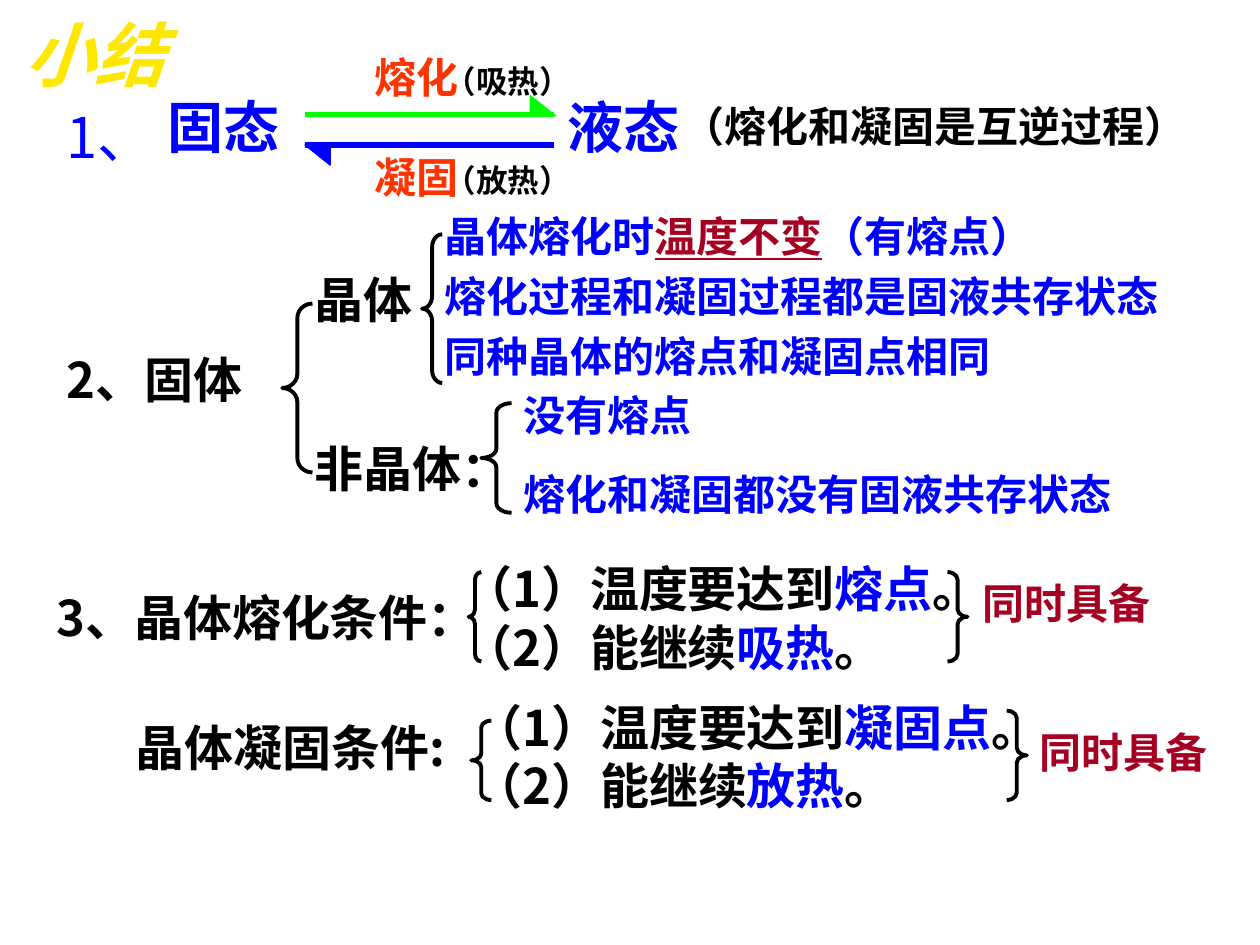
from dataclasses import dataclass

from lxml import etree
from pptx import Presentation
from pptx.dml.color import RGBColor
from pptx.enum.shapes import MSO_CONNECTOR, MSO_SHAPE
from pptx.enum.text import MSO_ANCHOR, PP_ALIGN
from pptx.oxml.ns import qn
from pptx.slide import Slide
from pptx.util import Inches, Pt

LEFT_BRACE = MSO_SHAPE.LEFT_BRACE
RIGHT_BRACE = MSO_SHAPE.RIGHT_BRACE
TRIANGLE = MSO_SHAPE.RIGHT_TRIANGLE
STRAIGHT = MSO_CONNECTOR.STRAIGHT
MIDDLE = MSO_ANCHOR.MIDDLE
LEFT, CENTER = PP_ALIGN.LEFT, PP_ALIGN.CENTER

FONT = "Noto Sans CJK SC"
BLACK, BLUE, GREEN = "000000", "0000FF", "00FF00"
ORANGE, CRIMSON, YELLOW = "FF3300", "A50021", "FFE701"


@dataclass(frozen=True)
class Span:
    text: str
    color: str
    underline: bool = False


@dataclass(frozen=True)
class Label:
    left: float
    top: float
    width: float
    height: float
    size: int
    spans: tuple[Span, ...]
    bold: bool = True
    italic: bool = False
    align: PP_ALIGN = LEFT


@dataclass(frozen=True)
class Brace:
    left: float
    top: float
    width: float
    height: float
    curve: float
    kind: MSO_SHAPE = LEFT_BRACE


@dataclass(frozen=True)
class HalfArrow:
    top: float
    head_left: float
    head_top: float
    rotation: int
    color: str


def rgb(color: str) -> RGBColor:
    return RGBColor.from_string(color)


def plain(left: float, top: float, width: float, height: float, size: int,
          text: str, color: str, **style) -> Label:
    return Label(left, top, width, height, size, (Span(text, color),), **style)


def conditions(left: float, top: float, width: float, point: str, heat: str) -> Label:
    return Label(left, top, width, 1.04, 28, (
        Span("（1）温度要达到", BLACK), Span(point, BLUE),
        Span("。（2）能继续", BLACK), Span(heat, BLUE), Span("。", BLACK)))


def draw_label(slide: Slide, label: Label) -> None:
    box = slide.shapes.add_textbox(Inches(label.left), Inches(label.top),
                                   Inches(label.width), Inches(label.height))
    frame = box.text_frame
    frame.word_wrap = True
    frame.vertical_anchor = MIDDLE
    paragraph = frame.paragraphs[0]
    paragraph.alignment = label.align
    font = paragraph.font
    font.name, font.size = FONT, Pt(label.size)
    font.bold, font.italic = label.bold, label.italic
    defaults = paragraph._p.pPr.find(qn("a:defRPr"))
    etree.SubElement(defaults, qn("a:ea")).set("typeface", FONT)
    for span in label.spans:
        run = paragraph.add_run()
        run.text = span.text
        run.font.color.rgb = rgb(span.color)
        if span.underline:
            run.font.underline = True


def draw_brace(slide: Slide, brace: Brace) -> None:
    shape = slide.shapes.add_shape(brace.kind, Inches(brace.left), Inches(brace.top),
                                   Inches(brace.width), Inches(brace.height))
    shape.adjustments[0] = brace.curve
    shape.shadow.inherit = False
    shape.fill.background()
    shape.line.color.rgb = rgb(BLACK)
    shape.line.width = Pt(2.25)


def draw_half_arrow(slide: Slide, arrow: HalfArrow) -> None:
    shaft = slide.shapes.add_connector(STRAIGHT, Inches(2.42), Inches(arrow.top),
                                       Inches(4.4), Inches(arrow.top))
    shaft.line.color.rgb = rgb(arrow.color)
    shaft.line.width = Pt(3)
    etree.SubElement(shaft._element.spPr, qn("a:effectLst"))
    head = slide.shapes.add_shape(TRIANGLE, Inches(arrow.head_left),
                                  Inches(arrow.head_top), Inches(0.2), Inches(0.16))
    head.rotation = arrow.rotation
    head.shadow.inherit = False
    head.fill.solid()
    head.fill.fore_color.rgb = rgb(arrow.color)
    head.line.color.rgb = rgb(arrow.color)
    head.line.width = Pt(0.75)


HALF_ARROWS = (
    HalfArrow(0.91, 4.21, 0.76, 0, GREEN),
    HalfArrow(1.15, 2.42, 1.15, 180, BLUE),
)

BRACES = (
    Brace(2.24, 2.41, 0.24, 1.34, 0.47),
    Brace(3.35, 1.86, 0.16, 1.18, 0.63),
    Brace(3.82, 3.2, 0.24, 0.87, 0.31),
    Brace(3.72, 4.54, 0.1, 0.71, 0.6),
    Brace(7.52, 4.54, 0.16, 0.71, 0.37, RIGHT_BRACE),
    Brace(3.74, 5.72, 0.16, 0.63, 0.33),
    Brace(7.99, 5.64, 0.16, 0.71, 0.37, RIGHT_BRACE),
)

LABELS = (
    plain(0.04, 0.05, 1.42, 0.75, 40, "小结", YELLOW, italic=True, align=CENTER),
    plain(0.43, 0.76, 1.19, 0.64, 32, "1、", BLUE, bold=False),
    plain(1.23, 0.68, 1.39, 0.64, 32, "固态", BLUE),
    plain(4.41, 0.68, 1.46, 0.64, 32, "液态", BLUE),
    plain(2.87, 0.36, 0.88, 0.5, 24, "熔化", ORANGE),
    plain(2.87, 1.15, 0.88, 0.5, 24, "凝固", ORANGE),
    plain(3.43, 0.44, 1.21, 0.4, 18, "（吸热）", BLACK),
    plain(3.43, 1.23, 1.21, 0.4, 18, "（放热）", BLACK),
    plain(5.32, 0.75, 4.24, 0.5, 24, "（熔化和凝固是互逆过程）", BLACK),
    plain(0.43, 2.72, 1.62, 0.57, 28, "2、固体", BLACK),
    plain(2.4, 2.09, 0.99, 0.57, 28, "晶体", BLACK),
    Label(3.43, 1.62, 5.28, 0.5, 24, (
        Span("晶体熔化时", BLUE), Span("温度不变", CRIMSON, underline=True),
        Span("（有熔点）", BLUE))),
    plain(3.43, 2.1, 6.22, 0.5, 24, "熔化过程和凝固过程都是固液共存状态", BLUE),
    plain(3.43, 2.57, 5.12, 0.5, 24, "同种晶体的熔点和凝固点相同", BLUE),
    plain(2.4, 3.43, 1.77, 0.57, 28, "非晶体：", BLACK),
    plain(4.06, 3.04, 2.6, 0.5, 24, "没有熔点", BLUE),
    plain(4.06, 3.67, 5.43, 0.5, 24, "熔化和凝固都没有固液共存状态", BLUE),
    plain(0.35, 4.61, 3.8, 0.57, 28, "3、晶体熔化条件：", BLACK),
    conditions(3.58, 4.38, 4.17, "熔点", "吸热"),
    plain(7.7, 4.53, 1.94, 0.5, 24, "同时具备", CRIMSON),
    plain(0.98, 5.64, 2.8, 0.57, 28, "晶体凝固条件:", BLACK),
    conditions(3.66, 5.48, 4.8, "凝固点", "放热"),
    plain(8.15, 5.72, 1.85, 0.5, 24, "同时具备", CRIMSON),
)


def main() -> None:
    presentation = Presentation()
    presentation.slide_width, presentation.slide_height = Inches(10), Inches(7.5)
    slide = presentation.slides.add_slide(presentation.slide_layouts[6])
    for arrow in HALF_ARROWS:
        draw_half_arrow(slide, arrow)
    for brace in BRACES:
        draw_brace(slide, brace)
    for label in LABELS:
        draw_label(slide, label)
    presentation.save("out.pptx")


if __name__ == "__main__":
    main()
